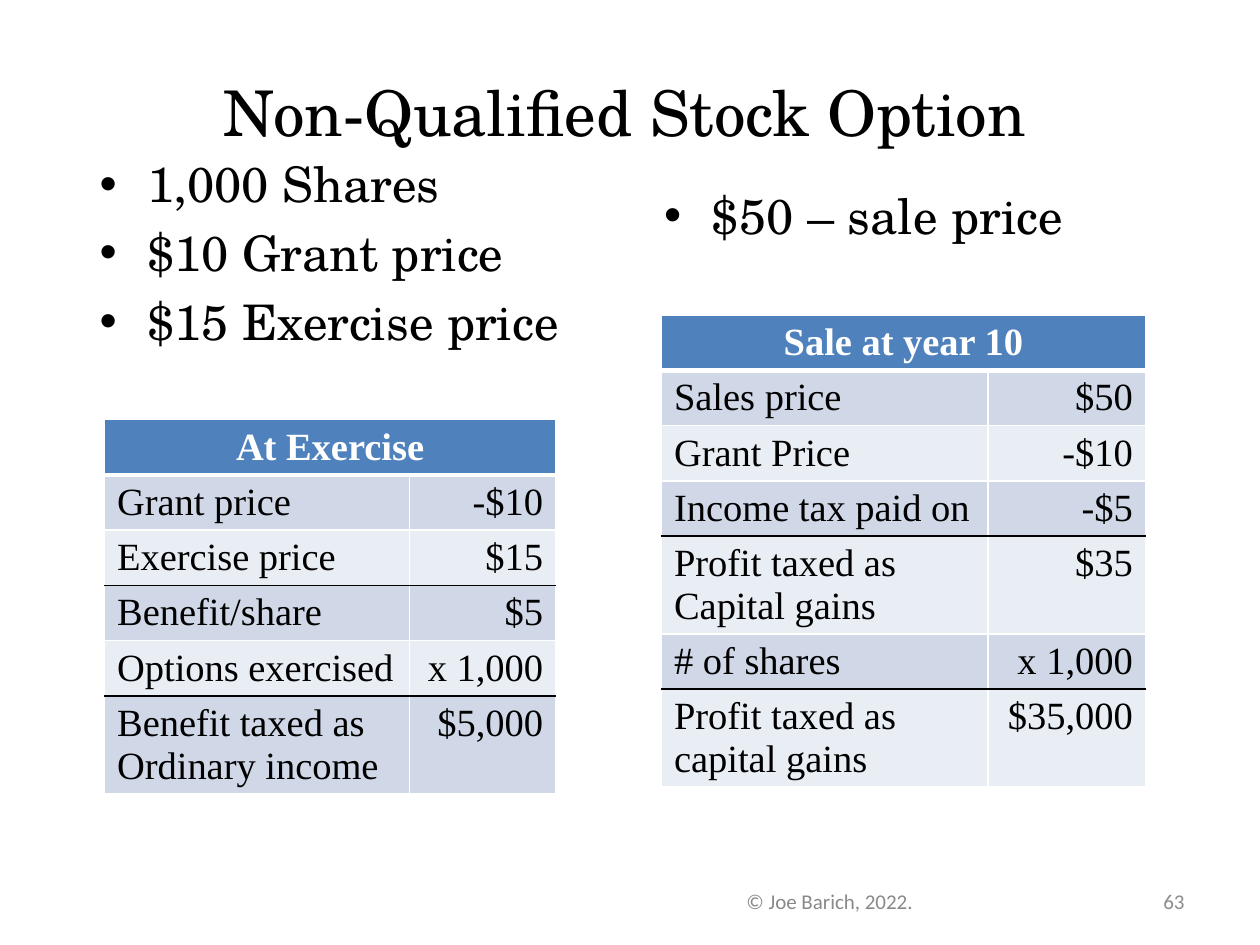
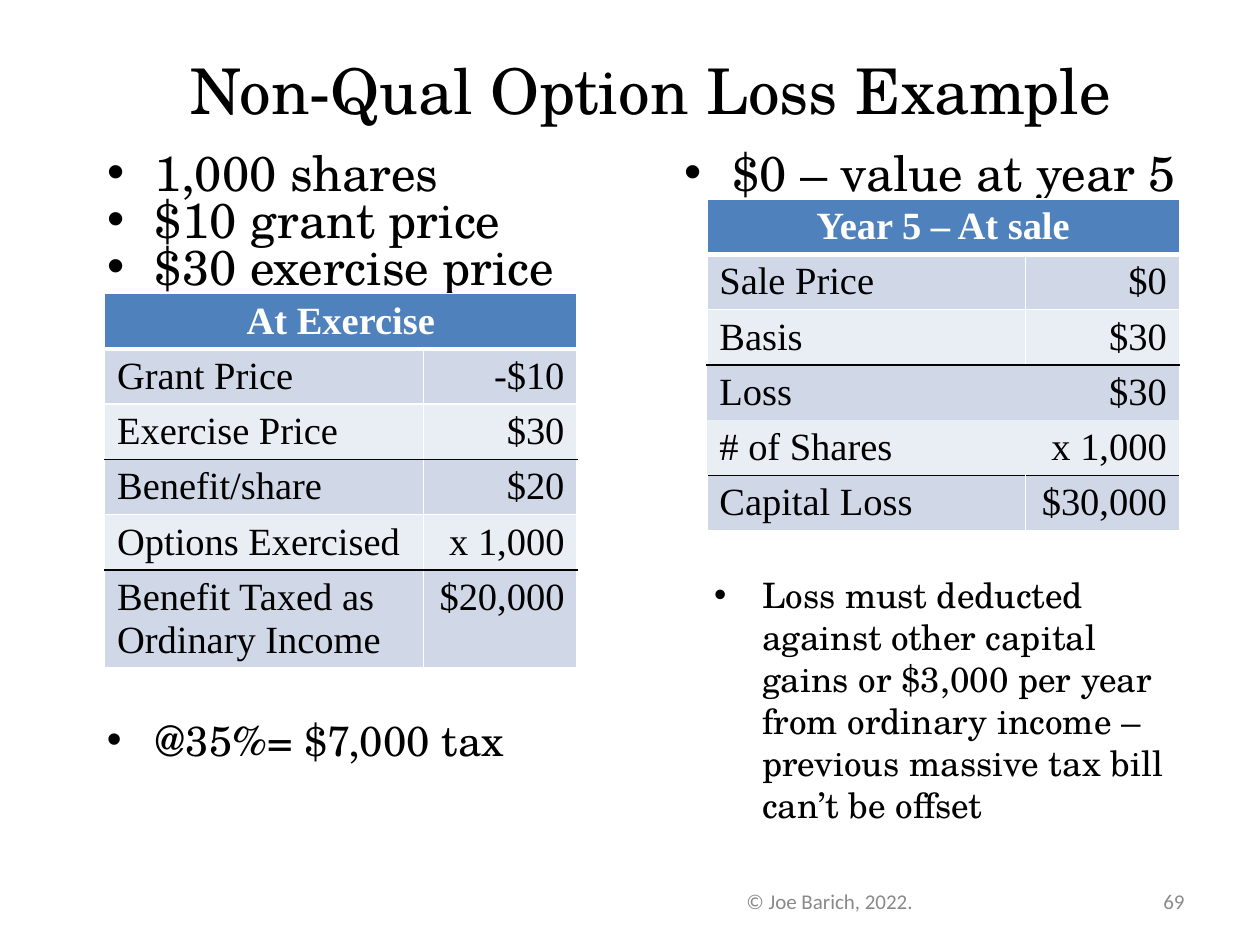
"""Build two slides that compare stock option outcomes with lists and tables."""
import dataclasses

import lxml.etree
import pptx
import pptx.dml.color
import pptx.enum.text
import pptx.oxml.ns
import pptx.util

Inches = pptx.util.Inches
Pt = pptx.util.Pt
qn = pptx.oxml.ns.qn
ALIGN = pptx.enum.text.PP_ALIGN
ANCHOR = pptx.enum.text.MSO_ANCHOR


@dataclasses.dataclass(frozen=True)
class Theme:
    text: str = "000000"
    white: str = "FFFFFF"
    header: str = "4F81BD"
    bands: tuple = ("D0D8E8", "E9EDF4")
    footer: str = "898989"
    number: str = "8C8C8C"
    serif: str = "TeX Gyre Schola"
    table_font: str = "Times New Roman"
    footer_font: str = "Calibri"
    title_size: int = 36
    list_size: int = 28
    tax_size: int = 24
    table_size: int = 22
    note_size: int = 20
    footer_size: int = 12
    indent: float = 0.38
    row_height: float = 0.43
    line: int = 1
    header_line: int = 3


def apply(target, values):
    for name, value in values.items():
        setattr(target, name, value)


class SlideBuilder:
    def __init__(self, deck, theme):
        self.deck = deck
        self.theme = theme
        self.page = None

    def start(self, title, place, number):
        theme = self.theme
        self.page = self.deck.slides.add_slide(self.deck.slide_layouts[3])
        frame = self.frame(self.page.shapes.title, place, ANCHOR.MIDDLE)
        self.add_text(frame.paragraphs[0], title, theme.title_size, theme.serif,
                      theme.text, ALIGN.CENTER)
        self.footer("© Joe Barich, 2022.", (5, 6.95, 3.17, 0.4), theme.footer, ALIGN.CENTER)
        self.footer(number, (8.33, 6.95, 1.17, 0.4), theme.number, ALIGN.RIGHT)

    def frame(self, box, place, anchor=ANCHOR.TOP):
        lengths = map(Inches, place)
        apply(box, dict(zip(("left", "top", "width", "height"), lengths)))
        apply(box.text_frame, {
            "word_wrap": True,
            "auto_size": pptx.enum.text.MSO_AUTO_SIZE.NONE,
            "vertical_anchor": anchor,
        })
        return box.text_frame

    def text_box(self, place, anchor=ANCHOR.TOP):
        box = self.page.shapes.add_textbox(*map(Inches, place))
        return self.frame(box, place, anchor)

    def add_text(self, para, text, size, font, color, align=ALIGN.LEFT, bold=False):
        para.alignment = align
        span = para.add_run()
        span.text = text
        apply(span.font, {"size": Pt(size), "name": font, "bold": bold})
        span.font.color.rgb = pptx.dml.color.RGBColor.from_string(color)

    def footer(self, text, place, color, align):
        frame = self.text_box(place, ANCHOR.MIDDLE)
        self.add_text(frame.paragraphs[0], text, self.theme.footer_size,
                      self.theme.footer_font, color, align)

    def bullets(self, frame, items, size, spacing=1.0, gap=0.2):
        indent = Inches(self.theme.indent)
        for index, item in enumerate(items):
            para = frame.add_paragraph() if index else frame.paragraphs[0]
            properties = para._p.get_or_add_pPr()
            properties.set("marL", str(indent))
            properties.set("indent", str(-indent))
            lxml.etree.SubElement(properties, qn("a:buFont"), typeface="Arial")
            lxml.etree.SubElement(properties, qn("a:buChar"), char="•")
            apply(para, {
                "line_spacing": spacing,
                "space_before": Pt(size * gap if index else 0),
                "space_after": Pt(0),
            })
            self.add_text(para, item, size, self.theme.serif, self.theme.text)

    def bullet_list(self, slot, place, items, **spacing):
        frame = self.frame(self.page.placeholders[slot], place)
        self.bullets(frame, items, self.theme.list_size, **spacing)

    def bullet_note(self, place, text, size):
        self.bullets(self.text_box(place), [text], size)

    def borders(self, cell, sides):
        properties = cell._tc.get_or_add_tcPr()
        for side in "LRTB":
            color, width = sides[side]
            line = lxml.etree.SubElement(properties, qn(f"a:ln{side}"), w=str(Pt(width)))
            if color:
                fill = lxml.etree.SubElement(line, qn("a:solidFill"))
                lxml.etree.SubElement(fill, qn("a:srgbClr"), val=color)
            else:
                lxml.etree.SubElement(line, qn("a:noFill"))

    def edge(self, row, ruled, plain):
        theme = self.theme
        if row == 0:
            return theme.white, theme.header_line
        if row in ruled:
            return theme.text, theme.line
        return (None if row in plain else theme.white), theme.line

    def table(self, corner, widths, heading, rows, ruled, plain=()):
        theme = self.theme
        height = theme.row_height * (len(rows) + 1)
        place = (*corner, sum(widths), height)
        table = self.page.shapes.add_table(len(rows) + 1, 2, *map(Inches, place)).table
        table.horz_banding = False
        for column, width in zip(table.columns, widths):
            column.width = Inches(width)
        table.cell(0, 0).merge(table.cell(0, 1))
        for index, values in enumerate([(heading, ""), *rows]):
            is_header = index == 0
            side = (None if index in plain else theme.white), theme.line
            top = (theme.white, theme.line) if is_header else self.edge(index - 1, ruled, plain)
            sides = {"L": side, "R": side, "T": top, "B": self.edge(index, ruled, plain)}
            fill = theme.header if is_header else theme.bands[(index - 1) % 2]
            color = theme.white if is_header else theme.text
            aligns = (ALIGN.CENTER if is_header else ALIGN.LEFT, ALIGN.RIGHT)
            for column, (value, align) in enumerate(zip(values, aligns)):
                cell = table.cell(index, column)
                self.borders(cell, sides)
                cell.fill.solid()
                cell.fill.fore_color.rgb = pptx.dml.color.RGBColor.from_string(fill)
                if value:
                    self.add_text(cell.text_frame.paragraphs[0], value, theme.table_size,
                                  theme.table_font, color, align, is_header)


def build_stock_option(builder):
    builder.start("Non-Qualified Stock Option", (0.25, 0.17, 9.42, 1.42), "63")
    builder.bullet_list(1, (0.69, 1.17, 3.97, 5.58),
                        ["1,000 Shares", "$10 Grant price", "$15 Exercise price"])
    builder.bullet_list(2, (5.17, 1.42, 4.33, 4.75), ["$50 – sale price"])
    builder.table((0.83, 3.33), (2.42, 1.16), "At Exercise", [
        ("Grant price", "-$10"),
        ("Exercise price", "$15"),
        ("Benefit/share", "$5"),
        ("Options exercised", "x 1,000"),
        ("Benefit taxed as Ordinary income", "$5,000"),
    ], ruled=(2, 4))
    builder.table((5.25, 2.5), (2.59, 1.25), "Sale at year 10", [
        ("Sales price", "$50"),
        ("Grant Price", "-$10"),
        ("Income tax paid on", "-$5"),
        ("Profit taxed as Capital gains", "$35"),
        ("# of shares", "x 1,000"),
        ("Profit taxed as capital gains", "$35,000"),
    ], ruled=(3, 5))


def build_option_loss(builder):
    widths = (2.53, 1.22)
    builder.start("Non-Qual Option Loss Example", (0.58, 0.25, 9.17, 0.92), "69")
    builder.bullet_list(1, (0.75, 1.17, 3.83, 1.17),
                        ["1,000 shares", "$10 grant price", "$30 exercise price"],
                        spacing=0.8, gap=0)
    builder.bullet_list(2, (5.33, 1.08, 4.33, 0.6), ["$0 – value at year 5"])
    builder.table((0.83, 2.33), widths, "At Exercise", [
        ("Grant Price", "-$10"),
        ("Exercise Price", "$30"),
        ("Benefit/share", "$20"),
        ("Options Exercised", "x 1,000"),
        ("Benefit Taxed as Ordinary Income", "$20,000"),
    ], ruled=(2, 4))
    builder.table((5.61, 1.58), widths, "Year 5 – At sale", [
        ("Sale Price", "$0"),
        ("Basis", "$30"),
        ("Loss", "$30"),
        ("# of Shares", "x 1,000"),
        ("Capital Loss", "$30,000"),
    ], ruled=(2, 4), plain=(3, 4))
    builder.bullet_note((0.75, 5.62, 3.83, 0.6), "@35%= $7,000 tax", builder.theme.tax_size)
    builder.bullet_note(
        (5.57, 4.5, 3.89, 2.17),
        "Loss must deducted against other capital gains or $3,000 per year from "
        "ordinary income – previous massive tax bill can’t be offset",
        builder.theme.note_size)


def main():
    deck = pptx.Presentation()
    apply(deck, {"slide_width": Inches(10), "slide_height": Inches(7.5)})
    builder = SlideBuilder(deck, Theme())
    build_stock_option(builder)
    build_option_loss(builder)
    deck.save("out.pptx")


if __name__ == "__main__":
    main()
